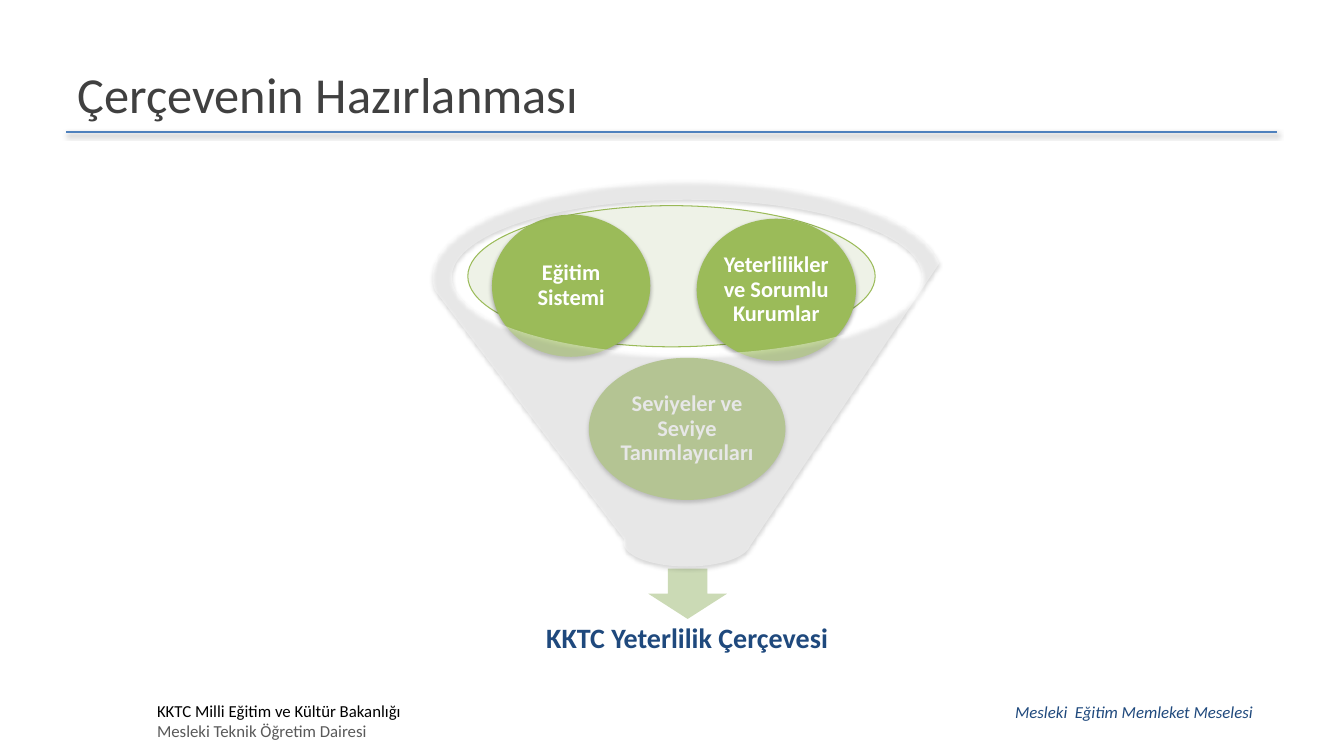
from dataclasses import dataclass
from typing import Optional

from lxml.etree import SubElement
from pptx import Presentation
from pptx.dml.color import RGBColor
from pptx.enum.shapes import MSO_CONNECTOR, MSO_SHAPE
from pptx.enum.text import MSO_ANCHOR, PP_ALIGN
from pptx.oxml.ns import qn
from pptx.util import Emu, Inches, Pt


@dataclass(frozen=True)
class Theme:
    font: str = "Calibri"
    white: str = "FFFFFF"
    black: str = "000000"
    title: str = "404040"
    muted: str = "595959"
    navy: str = "1F497D"
    blue: str = "4F81BD"
    green: str = "9BBB59"
    pale_green: str = "D5E0C4"
    arrow_green: str = "CBDAB5"
    title_size: int = 36
    result_size: int = 20
    topic_size: int = 16
    footer_size: int = 12


@dataclass(frozen=True)
class Frame:
    """Left, top, width and height in percent of the slide."""

    left: float
    top: float
    width: float
    height: float


@dataclass(frozen=True)
class Line:
    text: str
    size: int
    color: str
    bold: bool = False
    italic: bool = False


@dataclass(frozen=True)
class Figure:
    preset: MSO_SHAPE
    frame: Frame
    fill: str
    opacity: int = 100
    outline: Optional[str] = None
    shadow: int = 0
    label: str = ""


@dataclass(frozen=True)
class Caption:
    frame: Frame
    lines: tuple
    inset: float = 0.1
    centered: bool = False


THEME = Theme()
WIDTH, HEIGHT = Inches(13.33), Inches(7.5)
TOPIC_HEIGHT = 18.8
TOPIC_SHADOW = 35
FUNNEL_SHADOW = 38

TITLE = Line("Çerçevenin Hazırlanması", THEME.title_size, THEME.title)
TITLE_FRAME = Frame(5.03, 4, 90.02, 16.67)
TITLE_RULE = Frame(4.95, 17.47, 90.1, 0)

FOOTERS = (
    Caption(
        Frame(74.79, 92.13, 20.63, 4),
        (Line("Mesleki  Eğitim Memleket Meselesi", THEME.footer_size, THEME.navy, italic=True),),
    ),
    Caption(
        Frame(10.95, 92, 28.43, 6.67),
        (
            Line("KKTC Milli Eğitim ve Kültür Bakanlığı", THEME.footer_size, THEME.black),
            Line("Mesleki Teknik Öğretim Dairesi", THEME.footer_size, THEME.muted),
        ),
    ),
)
RESULT = Caption(
    Frame(30.01, 78.27, 42.24, 12.53),
    (Line("KKTC Yeterlilik Çerçevesi", THEME.result_size, THEME.navy, bold=True),),
    inset=0.16,
    centered=True,
)


def topic(label: str, left: float, top: float, width: float) -> Figure:
    frame = Frame(left, top, width, TOPIC_HEIGHT)
    return Figure(MSO_SHAPE.OVAL, frame, THEME.green, shadow=TOPIC_SHADOW, label=label)


FIGURES = (
    Figure(MSO_SHAPE.OVAL, Frame(34.81, 27.2, 30.31, 18.67), THEME.pale_green, 40, THEME.green),
    Figure(MSO_SHAPE.DOWN_ARROW, Frame(48.24, 75.2, 5.85, 6.67), THEME.arrow_green),
    topic("Seviyeler ve Seviye Tanımlayıcıları", 43.81, 47.33, 14.63),
    topic("Yeterlilikler ve Sorumlu Kurumlar", 51.84, 28.93, 11.85),
    topic("Eğitim Sistemi", 36.61, 28.4, 11.78),
    Figure(MSO_SHAPE.FUNNEL, Frame(32.18, 23.87, 37.88, 51.07), THEME.white, 40, shadow=FUNNEL_SHADOW),
)


def box(frame: Frame) -> tuple[Emu, Emu, Emu, Emu]:
    return (
        Emu(round(WIDTH * frame.left / 100)),
        Emu(round(HEIGHT * frame.top / 100)),
        Emu(round(WIDTH * frame.width / 100)),
        Emu(round(HEIGHT * frame.height / 100)),
    )


def write(text_frame, lines: tuple, inset: float, centered: bool = False) -> None:
    text_frame.word_wrap = True
    text_frame.margin_left = text_frame.margin_right = Inches(inset)
    text_frame.margin_top = text_frame.margin_bottom = Inches(min(inset, 0.05) if not centered else inset)
    text_frame.text = "\n".join(line.text for line in lines)
    for paragraph, line in zip(text_frame.paragraphs, lines):
        paragraph.alignment = PP_ALIGN.CENTER if centered else PP_ALIGN.LEFT
        if centered:
            paragraph.line_spacing = 0.9
        for run in paragraph.runs:
            run.font.name = THEME.font
            run.font.size = Pt(line.size)
            run.font.bold = line.bold
            run.font.italic = line.italic
            run.font.color.rgb = RGBColor.from_string(line.color)
    if centered:
        text_frame.vertical_anchor = MSO_ANCHOR.MIDDLE


def add_shadow(effects, opacity: int) -> None:
    shadow = SubElement(effects, qn("a:outerShdw"), blurRad="40000", dist="22000", dir="5400000", rotWithShape="0")
    color = SubElement(shadow, qn("a:srgbClr"), val=THEME.black)
    SubElement(color, qn("a:alpha"), val=str(opacity * 1000))


def draw_rule(slide, frame: Frame) -> None:
    left, top, width, height = box(frame)
    rule = slide.shapes.add_connector(MSO_CONNECTOR.STRAIGHT, left, top, left + width, top + height)
    rule.line.color.rgb = RGBColor.from_string(THEME.blue)
    rule.line.width = Pt(2)
    add_shadow(SubElement(rule.element.spPr, qn("a:effectLst")), FUNNEL_SHADOW)


def draw_figure(slide, figure: Figure) -> None:
    shape = slide.shapes.add_shape(figure.preset, *box(figure.frame))
    shape.fill.solid()
    shape.fill.fore_color.rgb = RGBColor.from_string(figure.fill)
    properties = shape.element.spPr
    if figure.opacity < 100:
        color = properties.find(qn("a:solidFill")).find(qn("a:srgbClr"))
        SubElement(color, qn("a:alpha"), val=str(figure.opacity * 1000))
    if figure.outline:
        shape.line.color.rgb = RGBColor.from_string(figure.outline)
        shape.line.width = Pt(0.75)
    else:
        shape.line.fill.background()
    shape.shadow.inherit = False
    if figure.shadow:
        add_shadow(properties.find(qn("a:effectLst")), figure.shadow)
    if figure.label:
        label = Line(figure.label, THEME.topic_size, THEME.white, bold=True)
        write(shape.text_frame, (label,), 0.02, centered=True)


def draw_caption(slide, caption: Caption) -> None:
    textbox = slide.shapes.add_textbox(*box(caption.frame))
    write(textbox.text_frame, caption.lines, caption.inset, caption.centered)


def main() -> None:
    presentation = Presentation()
    presentation.slide_width, presentation.slide_height = WIDTH, HEIGHT
    slide = presentation.slides.add_slide(presentation.slide_layouts[5])
    title = slide.shapes.title
    title.left, title.top, title.width, title.height = box(TITLE_FRAME)
    write(title.text_frame, (TITLE,), 0.1)
    title.text_frame.vertical_anchor = MSO_ANCHOR.MIDDLE
    draw_rule(slide, TITLE_RULE)
    for footer in FOOTERS:
        draw_caption(slide, footer)
    for figure in FIGURES:
        draw_figure(slide, figure)
    draw_caption(slide, RESULT)
    presentation.save("out.pptx")


if __name__ == "__main__":
    main()
